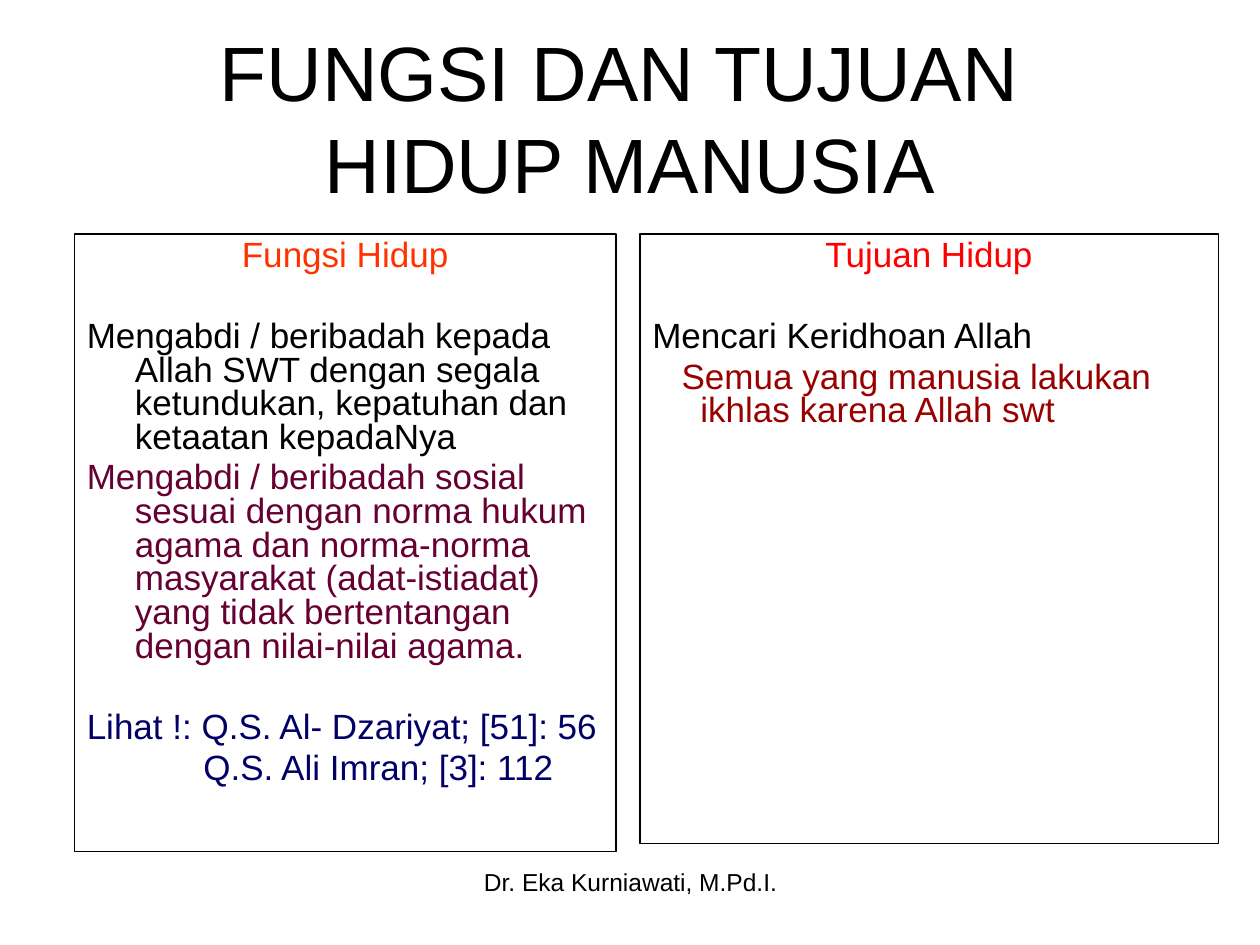
from pptx import Presentation
from pptx.dml.color import RGBColor
from pptx.enum.shapes import MSO_SHAPE
from pptx.enum.text import MSO_ANCHOR, PP_ALIGN
from pptx.util import Cm, Pt

HANGING = (0.97, -0.97)
GAP = 4
SECTION_GAP = 27.2


def color(value):
    return RGBColor.from_string(value)


def add_span(para, text, size, ink):
    span = para.add_run()
    span.text = text
    span.font.name = "Arial"
    span.font.size = Pt(size)
    span.font.color.rgb = color(ink)


def add_centered_text(page, box, lines, size, anchor):
    shape = page.shapes.add_textbox(*map(Cm, box))
    frame = shape.text_frame
    frame.word_wrap = True
    frame.vertical_anchor = anchor
    para = frame.paragraphs[0]
    para.alignment = PP_ALIGN.CENTER
    for index, line in enumerate(lines):
        if index:
            para.add_line_break()
        add_span(para, line, size, "000000")


def style_para(para, align, gap, indents):
    para.alignment = align
    para.line_spacing = 0.8
    para.space_before = Pt(gap)
    margin, first = indents
    properties = para._p.get_or_add_pPr()
    properties.set("marL", str(Cm(margin)))
    properties.set("indent", str(Cm(first)))


def add_panel(page, box, heading, heading_ink, entries):
    panel = page.shapes.add_shape(MSO_SHAPE.RECTANGLE, *map(Cm, box))
    panel.shadow.inherit = False
    panel.fill.background()
    panel.line.color.rgb = color("000000")
    panel.line.width = Pt(0.75)
    frame = panel.text_frame
    frame.word_wrap = True
    frame.vertical_anchor = MSO_ANCHOR.TOP
    para = frame.paragraphs[0]
    style_para(para, PP_ALIGN.CENTER, GAP, HANGING)
    add_span(para, heading, 20, heading_ink)
    for text, ink, gap, indents in entries:
        para = frame.add_paragraph()
        style_para(para, PP_ALIGN.LEFT, gap, indents)
        add_span(para, text, 20, ink)


def main():
    deck = Presentation()
    deck.slide_width = Cm(25.4)
    deck.slide_height = Cm(19.05)
    page = deck.slides.add_slide(deck.slide_layouts[6])
    add_centered_text(page, (1.27, 0.76, 22.86, 3.18),
                      ["FUNGSI DAN TUJUAN ", "HIDUP MANUSIA"], 44, MSO_ANCHOR.MIDDLE)
    add_panel(page, (1.5, 4.72, 10.92, 12.45), "Fungsi Hidup", "FF3300", [
        ("Mengabdi / beribadah kepada Allah SWT dengan segala ketundukan, "
         "kepatuhan dan ketaatan kepadaNya", "000000", SECTION_GAP, HANGING),
        ("Mengabdi / beribadah sosial sesuai dengan norma hukum agama dan "
         "norma-norma masyarakat (adat-istiadat) yang tidak bertentangan "
         "dengan nilai-nilai agama.", "660033", GAP, HANGING),
        ("Lihat !: Q.S. Al- Dzariyat; [51]: 56", "000066", SECTION_GAP, HANGING),
        ("Q.S. Ali Imran; [3]: 112", "000066", GAP, (2.35, 0)),
    ])
    add_panel(page, (12.9, 4.72, 11.66, 12.29), "Tujuan Hidup", "FF0000", [
        ("Mencari Keridhoan Allah", "000000", SECTION_GAP, HANGING),
        ("Semua yang manusia lakukan ikhlas karena Allah swt", "990000",
         GAP, (0.97, -0.38)),
    ])
    add_centered_text(page, (8.69, 17.35, 8.05, 1.32),
                      ["Dr. Eka Kurniawati, M.Pd.I."], 14, MSO_ANCHOR.TOP)
    deck.save("out.pptx")


if __name__ == "__main__":
    main()
